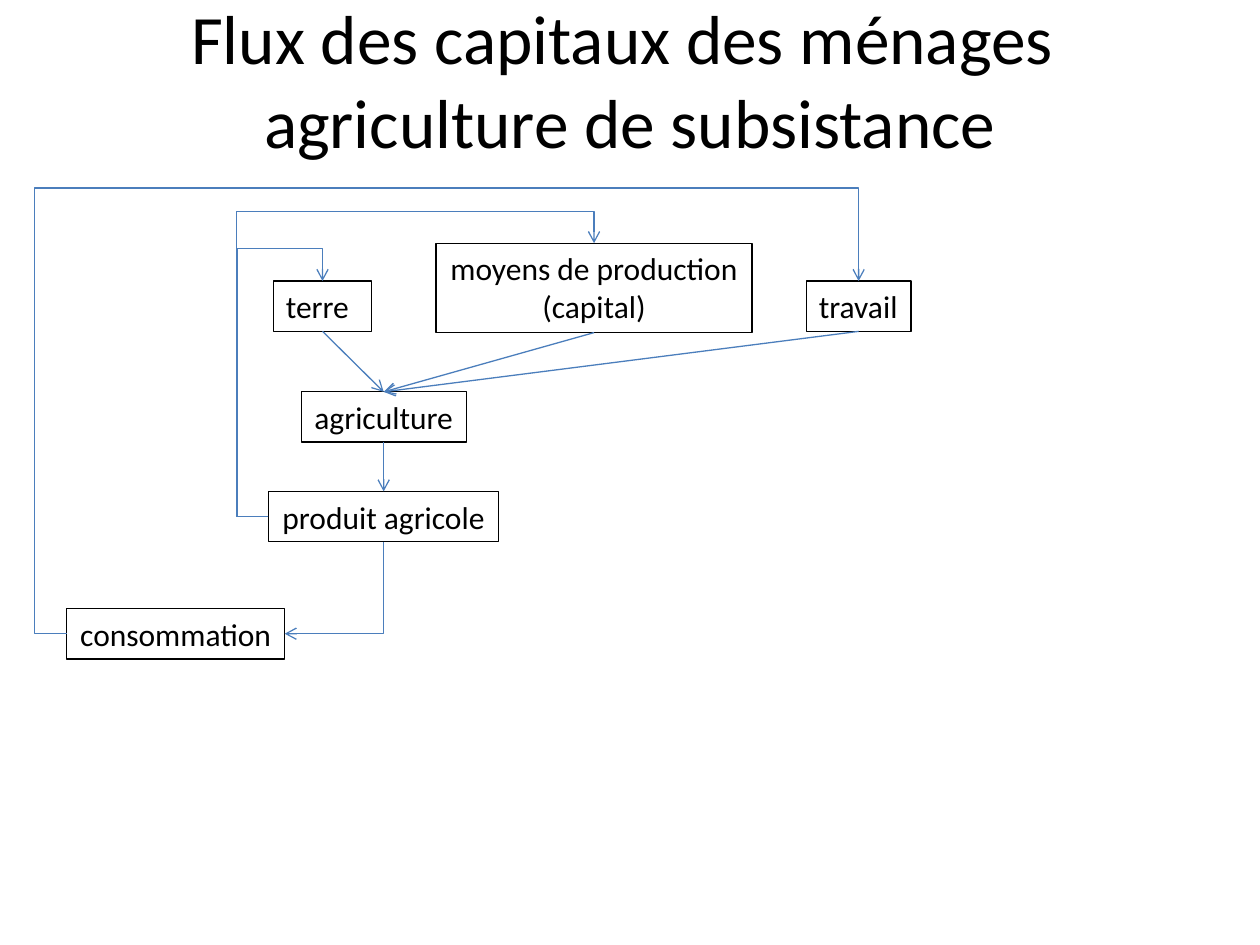
from dataclasses import dataclass

from lxml import etree
from pptx import Presentation
from pptx import util as u
from pptx.dml.color import RGBColor
from pptx.enum import shapes, text
from pptx.oxml.ns import qn

COLORS = {"ink": "000000", "arrow": "4B7EBC"}
FONT = "Calibri"


@dataclass
class Box:
    lines: tuple
    left: float
    top: float
    width: float
    height: float = 0.4
    align: text.PP_ALIGN = text.PP_ALIGN.CENTER
    wrap: bool = False

    @property
    def top_mid(self) -> tuple:
        return self.left + self.width / 2, self.top

    @property
    def bottom_mid(self) -> tuple:
        return self.left + self.width / 2, self.top + self.height

    @property
    def left_mid(self) -> tuple:
        return self.left, self.top + self.height / 2

    @property
    def right_mid(self) -> tuple:
        return self.left + self.width, self.top + self.height / 2


@dataclass
class Loop:
    source: Box
    target: Box
    lane_x: float
    lane_y: float


def write_lines(tf, lines: tuple, size: float, align) -> None:
    p = tf.paragraphs[0]
    p.alignment = align
    for i, line in enumerate(lines):
        if i:
            p.add_line_break()
        r = p.add_run()
        r.text = line
        r.font.size = u.Pt(size)
        r.font.name = FONT
        r.font.color.rgb = RGBColor.from_string(COLORS["ink"])


def draw_title(s, lines: tuple) -> None:
    sp = s.shapes.add_textbox(u.Inches(0.5), u.Inches(0), u.Inches(9), u.Inches(1.25))
    tf = sp.text_frame
    tf.word_wrap = True
    tf.vertical_anchor = text.MSO_ANCHOR.MIDDLE
    write_lines(tf, lines, 39.6, text.PP_ALIGN.CENTER)


def draw_box(s, box: Box) -> None:
    sp = s.shapes.add_textbox(*map(u.Inches, (box.left, box.top, box.width, box.height)))
    sp.line.color.rgb = RGBColor.from_string(COLORS["ink"])
    sp.line.width = u.Pt(0.75)
    tf = sp.text_frame
    tf.word_wrap = box.wrap
    tf.auto_size = text.MSO_AUTO_SIZE.SHAPE_TO_FIT_TEXT
    write_lines(tf, box.lines, 18, box.align)


def draw_arrow(s, start: tuple, end: tuple, kind=shapes.MSO_CONNECTOR.STRAIGHT):
    cxn = s.shapes.add_connector(kind, *map(u.Inches, start + end))
    cxn.line.color.rgb = RGBColor.from_string(COLORS["arrow"])
    cxn.line.width = u.Pt(0.75)
    etree.SubElement(cxn.line._get_or_add_ln(), qn("a:tailEnd"), type="arrow")
    etree.SubElement(cxn._element.spPr, qn("a:effectLst"))
    return cxn


def bend(cxn, preset: str, rotation: int, flip: bool, adjustments: tuple = ()) -> None:
    spPr = cxn._element.spPr
    xfrm = spPr.find(qn("a:xfrm"))
    for name in ("flipH", "flipV"):
        xfrm.attrib.pop(name, None)
    xfrm.set("rot", str(rotation * 60000))
    if flip:
        xfrm.set("flipH", "1")
    geom = spPr.find(qn("a:prstGeom"))
    geom.set("prst", preset)
    guides = geom.find(qn("a:avLst"))
    for i, value in enumerate(adjustments, 1):
        etree.SubElement(guides, qn("a:gd"), name=f"adj{i}", fmla=f"val {round(value * 100000)}")


def draw_loop(s, loop: Loop) -> None:
    start, end = loop.source.left_mid, loop.target.top_mid
    cxn = draw_arrow(s, start, end, shapes.MSO_CONNECTOR.ELBOW)
    across = (loop.lane_x - start[0]) / (end[0] - start[0])
    up = (loop.lane_y - start[1]) / (end[1] - start[1])
    bend(cxn, "bentConnector4", 180, True, (across, up))


def draw_corner(s, start: tuple, end: tuple) -> None:
    cxn = draw_arrow(s, start, end, shapes.MSO_CONNECTOR.ELBOW)
    width, height = end[1] - start[1], start[0] - end[0]
    cxn.left = u.Inches((start[0] + end[0] - width) / 2)
    cxn.top = u.Inches((start[1] + end[1] - height) / 2)
    cxn.width, cxn.height = u.Inches(width), u.Inches(height)
    bend(cxn, "bentConnector2", 90, False)


def main() -> None:
    prs = Presentation()
    prs.slide_width, prs.slide_height = u.Inches(10), u.Inches(7.5)
    s = prs.slides.add_slide(prs.slide_layouts[6])
    draw_title(s, ("Flux des capitaux des ménages ", "agriculture de subsistance"))

    left = text.PP_ALIGN.LEFT
    land = Box(("terre",), 2.17, 2.23, 0.78, align=left, wrap=True)
    labour = Box(("travail",), 6.4, 2.23, 0.83, align=left)
    capital = Box(("moyens de production", "(capital)"), 3.46, 1.93, 2.51, 0.71)
    farming = Box(("agriculture",), 2.39, 3.11, 1.31)
    produce = Box(("produit agricole",), 2.13, 3.9, 1.83)
    consumption = Box(("consommation",), 0.53, 4.83, 1.73)
    for box in (land, labour, capital, farming, produce, consumption):
        draw_box(s, box)

    for factor in (land, capital, labour):
        draw_arrow(s, factor.bottom_mid, farming.top_mid)
    draw_arrow(s, farming.bottom_mid, produce.top_mid)
    draw_corner(s, produce.bottom_mid, consumption.right_mid)
    for loop in (
        Loop(consumption, labour, 0.27, 1.49),
        Loop(produce, capital, 1.88, 1.68),
        Loop(produce, land, 1.88, 1.97),
    ):
        draw_loop(s, loop)

    prs.save("out.pptx")


if __name__ == "__main__":
    main()
